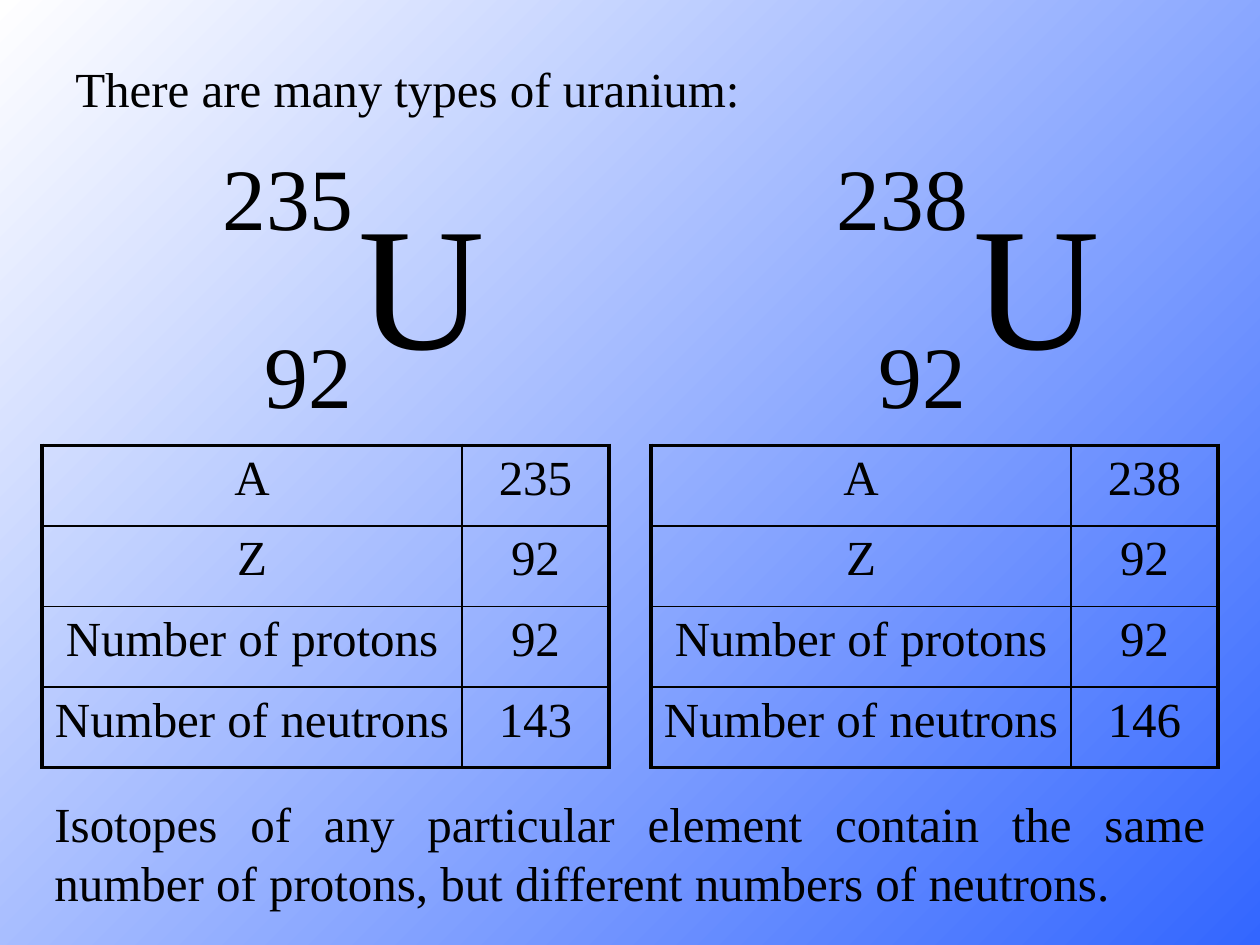
from dataclasses import dataclass

from lxml import etree
from pptx import Presentation
from pptx import util as u
from pptx.dml.color import RGBColor
from pptx.enum import text
from pptx.oxml import ns

GRID = 12
FONT, INK = "Times New Roman", "000000"
BODY, MASS, SYMBOL = 28, 50, 100
TABLE_TOP, ROW_HEIGHT, COLUMNS = 42.4, 7.68, (40, 14)
THIN, THICK = 1, 2.25


@dataclass(frozen=True)
class Label:
    """Text placed in grid units."""
    words: str
    left: float
    top: float
    width: float
    height: float
    size: int = BODY
    wrap: bool = False


@dataclass(frozen=True)
class Isotope:
    """A uranium isotope with the left edges of its symbol and table."""
    mass: int
    symbol_left: float
    table_left: float
    protons: int = 92

    def labels(self) -> list[Label]:
        """Return the symbol, mass number and atomic number."""
        left = self.symbol_left
        return [Label("U", left + 13, 16, 14.4, 21.2, SYMBOL),
                Label(str(self.mass), left, 13, 14.9, 11.1, MASS),
                Label(str(self.protons), left + 4, 30, 10.8, 11.1, MASS)]

    def rows(self) -> list[tuple[str, int]]:
        """Return the rows of the isotope's table."""
        return [("A", self.mass), ("Z", self.protons),
                ("Number of protons", self.protons),
                ("Number of neutrons", self.mass - self.protons)]


LABELS = [
    Label("There are many types of uranium:", 6, 5, 65.8, 6.8),
    Label("Isotopes of any particular element contain the same number of protons, "
          "but different numbers of neutrons.", 4, 75, 112, 12.4, wrap=True),
]
ISOTOPES = [Isotope(235, 20, 4), Isotope(238, 78.5, 62)]


def grid(units: float) -> int:
    """Convert grid units to a length."""
    return u.Inches(units / GRID)


def color(code: str) -> RGBColor:
    """Convert a hex string to a colour."""
    return RGBColor.from_string(code)


def write(frame, words: str, size: int, align=None) -> None:
    """Write one run in the first paragraph of a frame."""
    para = frame.paragraphs[0]
    para.alignment = align
    span = para.add_run()
    span.text = words
    span.font.name, span.font.size = FONT, u.Pt(size)
    span.font.color.rgb = color(INK)


def draw_label(shapes, label: Label) -> None:
    """Add a text box, justified where it wraps."""
    box = shapes.add_textbox(*map(grid, (label.left, label.top, label.width, label.height)))
    frame = box.text_frame
    frame.word_wrap = label.wrap
    frame.auto_size = text.MSO_AUTO_SIZE.SHAPE_TO_FIT_TEXT
    align = text.PP_ALIGN.JUSTIFY if label.wrap else None
    write(frame, label.words, label.size, align)


def draw_borders(cell, outer: dict[str, bool]) -> None:
    """Give a cell thick outer and thin inner borders."""
    properties = cell._tc.get_or_add_tcPr()
    for place, (side, thick) in enumerate(outer.items()):
        line = etree.Element(ns.qn(f"a:ln{side}"), w=str(u.Pt(THICK if thick else THIN)))
        fill = etree.SubElement(line, ns.qn("a:solidFill"))
        etree.SubElement(fill, ns.qn("a:srgbClr"), val=INK)
        properties.insert(place, line)


def draw_table(page, isotope: Isotope) -> None:
    """Add the table of an isotope's numbers."""
    rows = isotope.rows()
    table = page.shapes.add_table(
        len(rows), len(COLUMNS), grid(isotope.table_left), grid(TABLE_TOP),
        grid(sum(COLUMNS)), grid(ROW_HEIGHT * len(rows))).table
    table.first_row = table.horz_banding = False
    for column, width in zip(table.columns, COLUMNS):
        column.width = grid(width)
    for r, row in enumerate(rows):
        table.rows[r].height = grid(ROW_HEIGHT)
        for c, value in enumerate(row):
            cell = table.cell(r, c)
            cell.fill.background()
            write(cell.text_frame, str(value), BODY, text.PP_ALIGN.CENTER)
            draw_borders(cell, {"L": c == 0, "R": c == len(COLUMNS) - 1,
                                "T": r == 0, "B": r == len(rows) - 1})


def paint_background(page) -> None:
    """Fill the page with a diagonal gradient."""
    fill = page.background.fill
    fill.gradient()
    fill.gradient_angle = 315
    for stop, code in zip(fill.gradient_stops, ("FFFFFF", "3366FF")):
        stop.color.rgb = color(code)


def main() -> None:
    """Build and save the deck."""
    deck = Presentation()
    deck.slide_width, deck.slide_height = u.Inches(10), u.Inches(7.5)
    page = deck.slides.add_slide(deck.slide_layouts[6])
    paint_background(page)
    for isotope in ISOTOPES:
        group = page.shapes.add_group_shape()
        for label in isotope.labels():
            draw_label(group.shapes, label)
    for label in LABELS:
        draw_label(page.shapes, label)
    for isotope in ISOTOPES:
        draw_table(page, isotope)
    deck.save("out.pptx")


if __name__ == "__main__":
    main()
